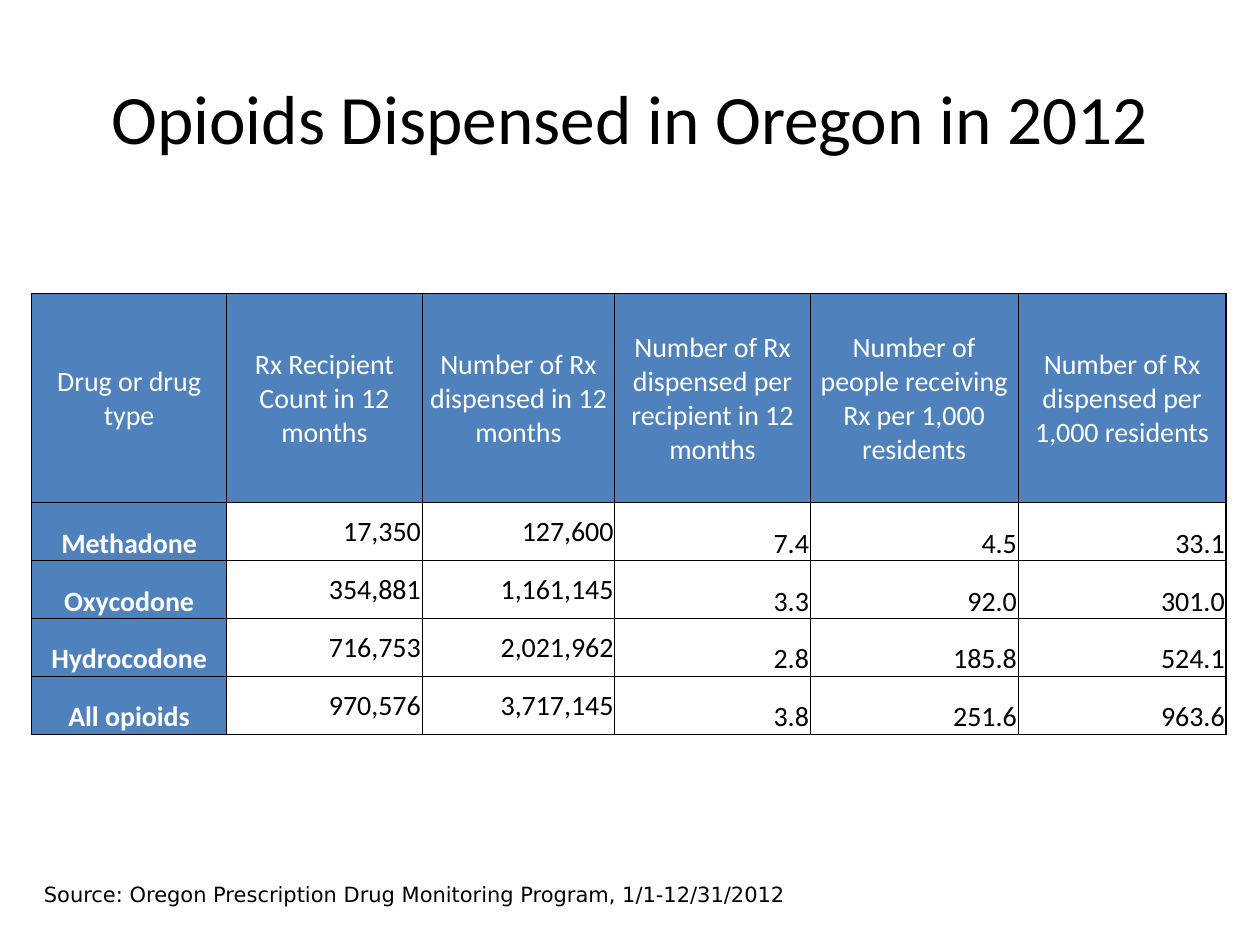
from dataclasses import dataclass

from pptx import Presentation
from pptx.dml.color import RGBColor
from pptx.enum.text import MSO_ANCHOR, PP_ALIGN
from pptx.oxml.xmlchemy import OxmlElement
from pptx.slide import Slide
from pptx.table import Table, _Cell
from pptx.text.text import _Paragraph
from pptx.util import Inches, Pt


@dataclass(frozen=True)
class Theme:
    black: str = "000000"
    white: str = "FFFFFF"
    blue: str = "4F81BD"
    body_font: str = "Calibri"
    source_font: str = "DejaVu Sans"
    title_size: float = 39.6
    table_size: float = 16
    source_size: float = 12
    thin_line: float = 0.5
    thick_line: float = 1


@dataclass(frozen=True)
class TextBox:
    text: str
    left: float
    top: float
    width: float
    height: float
    font: str
    size: float
    align: PP_ALIGN
    anchor: MSO_ANCHOR
    wrap: bool


@dataclass(frozen=True)
class DrugRow:
    name: str
    recipients: str
    dispensed: str
    per_recipient: str
    people_rate: str
    dispensed_rate: str

    def texts(self) -> tuple[str, ...]:
        return (self.name, self.recipients, self.dispensed,
                self.per_recipient, self.people_rate, self.dispensed_rate)


THEME = Theme()
COLUMN_WIDTHS = (1.55, 1.55, 1.53, 1.55, 1.65, 1.65)
HEADER_HEIGHT = 1.66
ROW_HEIGHT = 0.46
FIRST_RATE_COLUMN = 3

HEADER = DrugRow(
    "Drug or drug type",
    "Rx Recipient Count in 12 months",
    "Number of Rx dispensed in 12 months",
    "Number of Rx dispensed per recipient in 12 months",
    "Number of people receiving Rx per 1,000 residents",
    "Number of Rx dispensed per 1,000 residents",
)
DRUGS = (
    DrugRow("Methadone", "17,350", "127,600", "7.4", "4.5", "33.1"),
    DrugRow("Oxycodone", "354,881", "1,161,145", "3.3", "92.0", "301.0"),
    DrugRow("Hydrocodone", "716,753", "2,021,962", "2.8", "185.8", "524.1"),
    DrugRow("All opioids", "970,576", "3,717,145", "3.8", "251.6", "963.6"),
)
TEXT_BOXES = (
    TextBox("Opioids Dispensed in Oregon in 2012", 0.5, 0.3, 9, 1.25,
            THEME.body_font, THEME.title_size, PP_ALIGN.CENTER, MSO_ANCHOR.MIDDLE, True),
    TextBox("Source: Oregon Prescription Drug Monitoring Program, 1/1-12/31/2012",
            0.25, 6.95, 6.29, 0.3,
            THEME.source_font, THEME.source_size, PP_ALIGN.LEFT, MSO_ANCHOR.TOP, False),
)


def style_paragraph(paragraph: _Paragraph, font: str, size: float, color: str,
                    align: PP_ALIGN, bold: bool = False) -> None:
    paragraph.alignment = align
    paragraph.font.name = font
    paragraph.font.size = Pt(size)
    paragraph.font.bold = bold
    paragraph.font.color.rgb = RGBColor.from_string(color)


def add_text(slide: Slide, box: TextBox) -> None:
    shape = slide.shapes.add_textbox(
        Inches(box.left), Inches(box.top), Inches(box.width), Inches(box.height))
    frame = shape.text_frame
    frame.word_wrap = box.wrap
    frame.vertical_anchor = box.anchor
    frame.text = box.text
    style_paragraph(frame.paragraphs[0], box.font, box.size, THEME.black, box.align)


def set_border(cell: _Cell, side: str, width: float) -> None:
    line = OxmlElement(f"a:ln{side}")
    line.set("w", str(Pt(width)))
    fill = OxmlElement("a:solidFill")
    color = OxmlElement("a:srgbClr")
    color.set("val", THEME.black)
    fill.append(color)
    line.append(fill)
    cell._tc.get_or_add_tcPr().append(line)


def fill_cell(table: Table, row: int, column: int, text: str) -> None:
    cell = table.cell(row, column)
    is_header = row == 0
    is_name = column == 0
    is_shaded = is_header or is_name
    is_rate = column >= FIRST_RATE_COLUMN
    thick_sides = {
        "L": is_name,
        "R": column == len(COLUMN_WIDTHS) - 1,
        "T": False,
        "B": row == len(DRUGS) and is_rate,
    }
    for side, thick in thick_sides.items():
        set_border(cell, side, THEME.thick_line if thick else THEME.thin_line)
    if is_shaded:
        cell.fill.solid()
        cell.fill.fore_color.rgb = RGBColor.from_string(THEME.blue)
    else:
        cell.fill.background()
    cell.margin_left = cell.margin_right = cell.margin_top = Inches(0.01)
    cell.margin_bottom = Inches(0)
    at_bottom = not is_header and (is_name or is_rate)
    cell.vertical_anchor = MSO_ANCHOR.BOTTOM if at_bottom else MSO_ANCHOR.MIDDLE
    cell.text = text
    style_paragraph(
        cell.text_frame.paragraphs[0], THEME.body_font, THEME.table_size,
        THEME.white if is_shaded else THEME.black,
        PP_ALIGN.CENTER if is_shaded else PP_ALIGN.RIGHT,
        is_name and not is_header)


def add_drug_table(slide: Slide) -> None:
    records = (HEADER, *DRUGS)
    heights = (HEADER_HEIGHT, *[ROW_HEIGHT] * len(DRUGS))
    table = slide.shapes.add_table(
        len(records), len(COLUMN_WIDTHS), Inches(0.25), Inches(2.33),
        Inches(sum(COLUMN_WIDTHS)), Inches(sum(heights))).table
    table.first_row = False
    table.horz_banding = False
    for column, width in zip(table.columns, COLUMN_WIDTHS):
        column.width = Inches(width)
    for row, height in zip(table.rows, heights):
        row.height = Inches(height)
    for row_index, record in enumerate(records):
        for column_index, text in enumerate(record.texts()):
            fill_cell(table, row_index, column_index, text)


def main() -> None:
    """Build the slide of opioids dispensed and save it."""
    presentation = Presentation()
    presentation.slide_width = Inches(10)
    presentation.slide_height = Inches(7.5)
    slide = presentation.slides.add_slide(presentation.slide_layouts[6])
    add_drug_table(slide)
    for box in TEXT_BOXES:
        add_text(slide, box)
    presentation.save("out.pptx")


if __name__ == "__main__":
    main()
